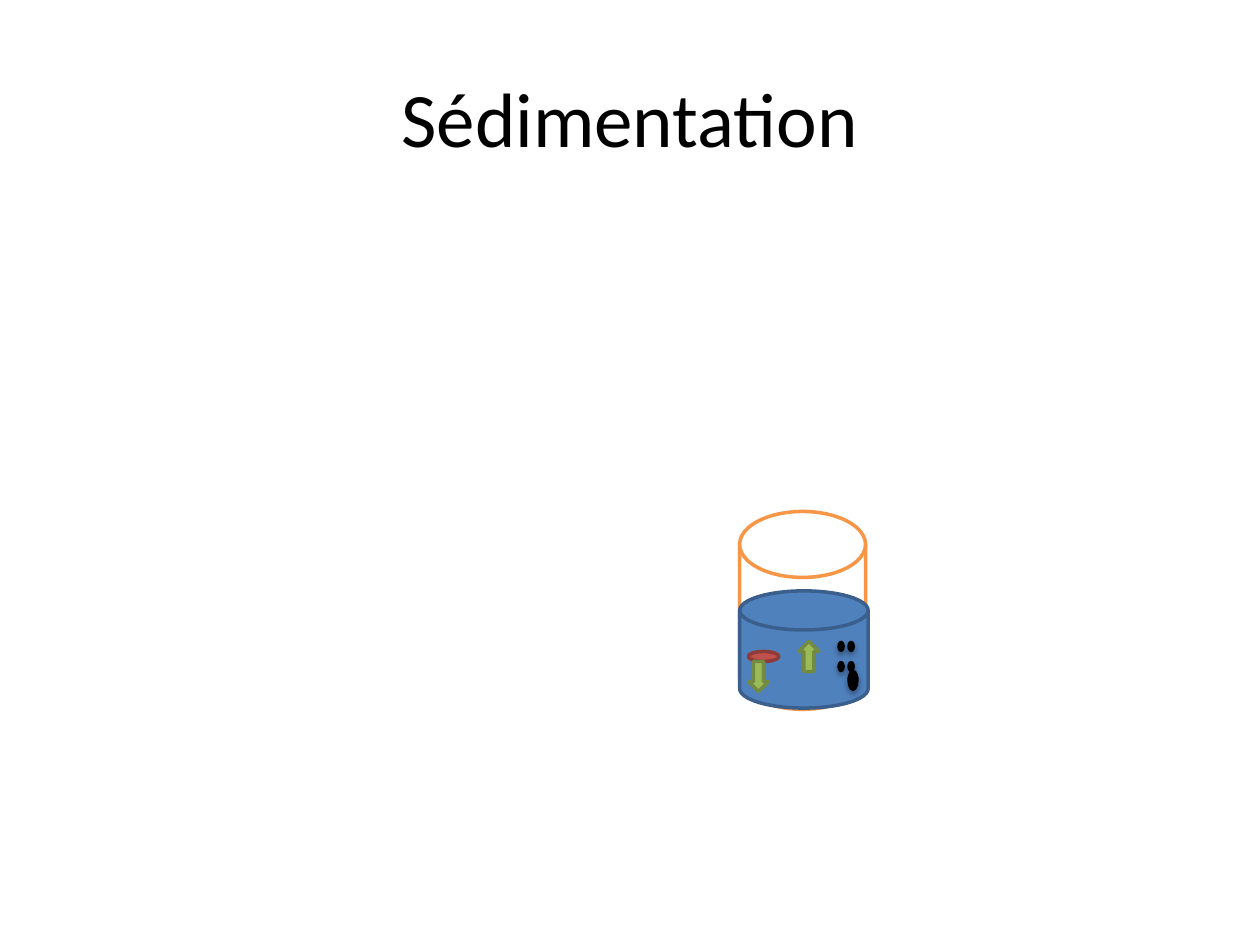
from itertools import product
from lxml import etree
from pptx import Presentation
from pptx import util as u
from pptx.dml.color import RGBColor
from pptx.enum import shapes, text
from pptx.oxml import ns

THEME = {
    "font": "Calibri", "title": 44, "ink": "000000",
    "glass": (None, "F79646", 2),
    "water": ("4F81BD", "3A5F8C", 2),
    "disc": ("C0504D", "8E3B39", 2),
    "arrow": ("9BBB59", "738A42", 2),
    "grain": ("000000", "000000", 0.75),
}
KIND = shapes.MSO_SHAPE
CAN, DOT = KIND.FLOWCHART_MAGNETIC_DISK, KIND.FLOWCHART_CONNECTOR

TITLE = "Sédimentation"
PARTS = [
    (CAN, "glass", (5.87, 4.06, 1, 1.57)),
    (CAN, "water", (5.87, 4.69, 1.02, 0.93)),
    (DOT, "disc", (5.94, 5.17, 0.24, 0.08)),
    (KIND.DOWN_ARROW, "arrow", (5.94, 5.25, 0.16, 0.24)),
    (KIND.UP_ARROW, "arrow", (6.34, 5.09, 0.16, 0.24)),
    (DOT, "grain", (6.73, 5.32, 0.08, 0.16)),
]
GRAINS = {"cols": (6.65, 6.73), "rows": (5.09, 5.25), "size": (0.05, 0.08)}


def place(box):
    return [u.Inches(v) for v in box]


def write(slide, words, box, size, color, font):
    frame = slide.shapes.add_textbox(*place(box)).text_frame
    frame.word_wrap = True
    frame.vertical_anchor = text.MSO_ANCHOR.MIDDLE
    para = frame.paragraphs[0]
    para.text = words
    para.alignment = text.PP_ALIGN.CENTER
    para.font.size = u.Pt(size)
    para.font.name = font
    para.font.color.rgb = RGBColor.from_string(color)


def shade(shape):
    effects = shape._element.spPr.find(ns.qn("a:effectLst"))
    outer = etree.SubElement(
        effects, ns.qn("a:outerShdw"), blurRad=str(u.Pt(3.1)),
        dist=str(u.Pt(1.8)), dir="5400000", rotWithShape="0")
    color = etree.SubElement(outer, ns.qn("a:srgbClr"), val=THEME["ink"])
    etree.SubElement(color, ns.qn("a:alpha"), val="35000")


def draw(slide, kind, style, box):
    fill, line, width = THEME[style]
    shape = slide.shapes.add_shape(kind, *place(box))
    shape.shadow.inherit = False
    if fill:
        shape.fill.solid()
        shape.fill.fore_color.rgb = RGBColor.from_string(fill)
    else:
        shape.fill.background()
    shape.line.color.rgb = RGBColor.from_string(line)
    shape.line.width = u.Pt(width)
    if style == "grain":
        shade(shape)


def main():
    deck = Presentation()
    deck.slide_width, deck.slide_height = place((10, 7.5))
    slide = deck.slides.add_slide(deck.slide_layouts[6])
    write(slide, TITLE, (0.5, 0.3, 9, 1.25), size=THEME["title"],
          color=THEME["ink"], font=THEME["font"])
    for part in PARTS:
        draw(slide, *part)
    for spot in product(GRAINS["cols"], GRAINS["rows"]):
        draw(slide, DOT, "grain", spot + GRAINS["size"])
    deck.save("out.pptx")


if __name__ == "__main__":
    main()
